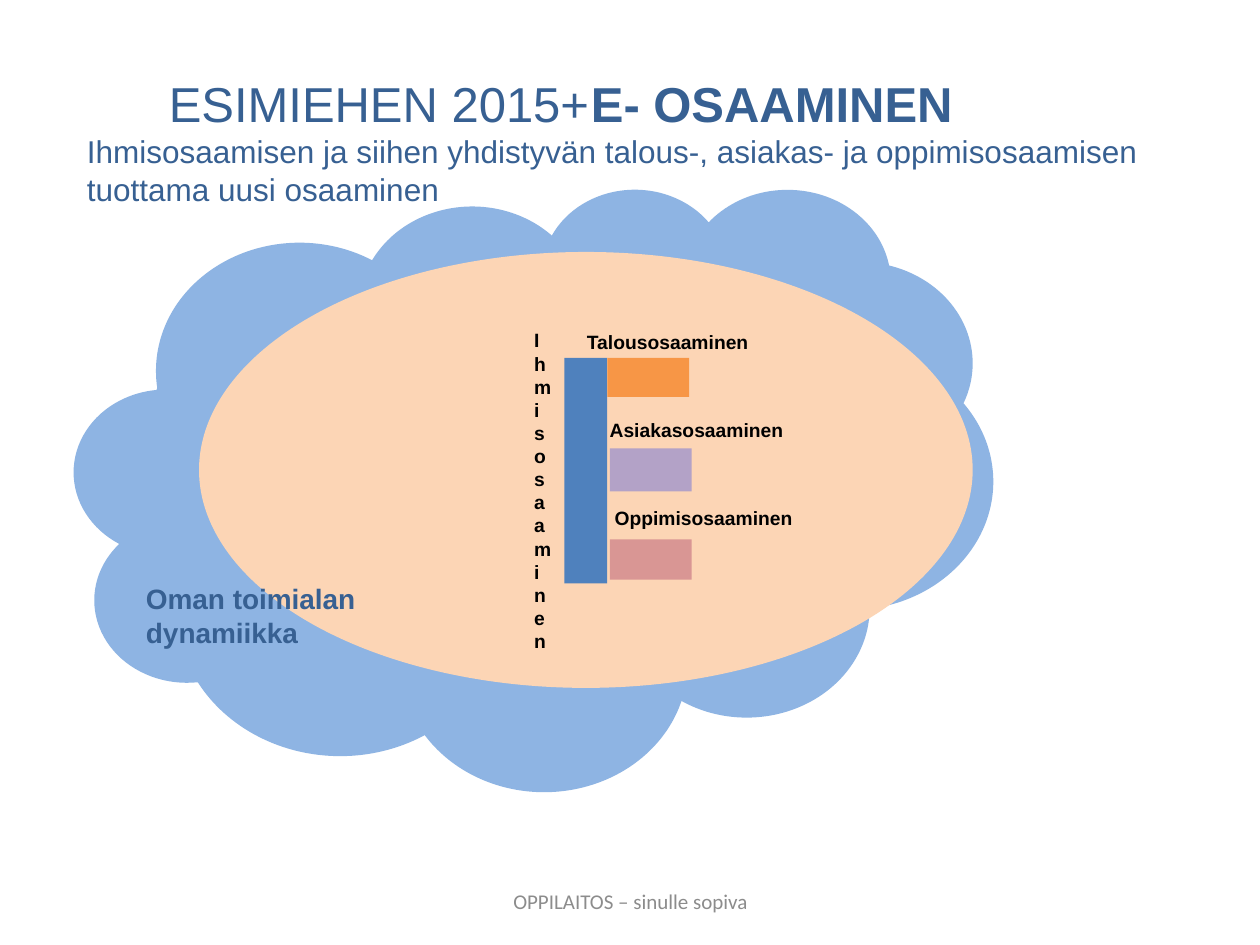
from dataclasses import dataclass

import pptx
import pptx.dml.color
import pptx.enum.shapes
import pptx.enum.text
import pptx.oxml.ns
import pptx.util
from lxml import etree

Inches = pptx.util.Inches
RGBColor = pptx.dml.color.RGBColor
Shape = pptx.enum.shapes.MSO_SHAPE
Align = pptx.enum.text.PP_ALIGN
Anchor = pptx.enum.text.MSO_ANCHOR

SKY = RGBColor(0x8E, 0xB4, 0xE3)
PEACH = RGBColor(0xFC, 0xD5, 0xB5)
BLUE = RGBColor(0x4F, 0x81, 0xBD)
ORANGE = RGBColor(0xF7, 0x96, 0x46)
PURPLE = RGBColor(0xB3, 0xA2, 0xC7)
ROSE = RGBColor(0xD9, 0x96, 0x94)
NAVY = RGBColor(0x37, 0x60, 0x92)
GREY = RGBColor(0x8C, 0x8C, 0x8C)
BLACK = RGBColor(0, 0, 0)


@dataclass(frozen=True)
class Area:
    left: float
    top: float
    width: float
    height: float

    def lengths(self) -> list:
        return [Inches(n) for n in (self.left, self.top, self.width, self.height)]


@dataclass(frozen=True)
class Figure:
    kind: Shape
    area: Area
    color: RGBColor


@dataclass(frozen=True)
class Style:
    size: int
    color: RGBColor
    bold: bool = False
    font: str = "Arial"


@dataclass(frozen=True)
class Label:
    area: Area
    lines: tuple
    style: Style
    align: Align = Align.LEFT
    anchor: Anchor = Anchor.TOP


SKILL = Style(11, BLACK, True)
HEADING = Style(28, NAVY)
HEADING_BOLD = Style(28, NAVY, True)
SUBHEADING = Style(18, NAVY)

FIGURES = (
    Figure(Shape.CLOUD, Area(0.59, 1.49, 7.29, 4.78), SKY),
    Figure(Shape.OVAL, Area(1.58, 2, 6.14, 3.46), PEACH),
    Figure(Shape.RECTANGLE, Area(4.48, 2.84, 0.34, 1.79), BLUE),
    Figure(Shape.RECTANGLE, Area(4.82, 2.84, 0.65, 0.31), ORANGE),
    Figure(Shape.RECTANGLE, Area(4.84, 3.56, 0.65, 0.34), PURPLE),
    Figure(Shape.RECTANGLE, Area(4.84, 4.28, 0.65, 0.32), ROSE),
)

LABELS = (
    Label(Area(3.42, 6.95, 3.17, 0.4), ("OPPILAITOS – sinulle sopiva",),
          Style(12, GREY, font="Calibri"), Align.CENTER, Anchor.MIDDLE),
    Label(Area(4.56, 2.57, 1.83, 0.3), ("Talousosaaminen",), SKILL),
    Label(Area(4.14, 2.56, 0.49, 2.69), tuple("Ihmisosaaminen"), SKILL),
    Label(Area(4.74, 3.27, 1.83, 0.3), ("Asiakasosaaminen",), SKILL),
    Label(Area(4.78, 3.97, 1.83, 0.3), ("Oppimisosaaminen",), SKILL),
    Label(Area(1.06, 4.57, 2.28, 0.64), ("Oman toimialan dynamiikka",),
          Style(16, NAVY, True)),
)


def add_span(para, text: str, style: Style) -> None:
    span = para.add_run()
    span.text = text
    span.font.name = style.font
    span.font.size = pptx.util.Pt(style.size)
    span.font.bold = style.bold
    span.font.color.rgb = style.color


def add_figure(slide, figure: Figure) -> None:
    shape = slide.shapes.add_shape(figure.kind, *figure.area.lengths())
    shape.shadow.inherit = False
    shape.fill.solid()
    shape.fill.fore_color.rgb = figure.color
    shape.line.fill.background()


def add_label(slide, label: Label) -> None:
    box = slide.shapes.add_textbox(*label.area.lengths())
    frame = box.text_frame
    frame.word_wrap = True
    frame.vertical_anchor = label.anchor
    for index, line in enumerate(label.lines):
        para = frame.add_paragraph() if index else frame.paragraphs[0]
        para.alignment = label.align
        add_span(para, line, label.style)


def set_indent_and_tab(para, indent: float, tab: float) -> None:
    properties = para._p.get_or_add_pPr()
    properties.set("marL", "0")
    properties.set("indent", str(Inches(indent)))
    tabs = etree.SubElement(properties, pptx.oxml.ns.qn("a:tabLst"))
    etree.SubElement(tabs, pptx.oxml.ns.qn("a:tab"), pos=str(Inches(tab)), algn="l")


def fill_title(slide, area: Area) -> None:
    title = slide.shapes.title
    title.left, title.top, title.width, title.height = area.lengths()
    frame = title.text_frame
    frame.word_wrap = True
    frame.auto_size = pptx.enum.text.MSO_AUTO_SIZE.NONE
    frame.vertical_anchor = Anchor.TOP
    heading = frame.paragraphs[0]
    set_indent_and_tab(heading, 0.65, 4.19)
    add_span(heading, "ESIMIEHEN 2015+\t", HEADING)
    add_span(heading, "E- OSAAMINEN", HEADING_BOLD)
    subheading = frame.add_paragraph()
    add_span(subheading, "Ihmisosaamisen ja siihen yhdistyvän talous-, asiakas- ja "
             "oppimisosaamisen tuottama uusi osaaminen", SUBHEADING)
    for para in frame.paragraphs:
        para.alignment = Align.LEFT
    slide.shapes._spTree.append(title._element)


def main() -> None:
    deck = pptx.Presentation()
    deck.slide_width, deck.slide_height = Inches(10), Inches(7.5)
    slide = deck.slides.add_slide(deck.slide_layouts[5])
    for figure in FIGURES:
        add_figure(slide, figure)
    fill_title(slide, Area(0.59, 0.53, 8.82, 1.18))
    for label in LABELS:
        add_label(slide, label)
    deck.save("out.pptx")


if __name__ == "__main__":
    main()
